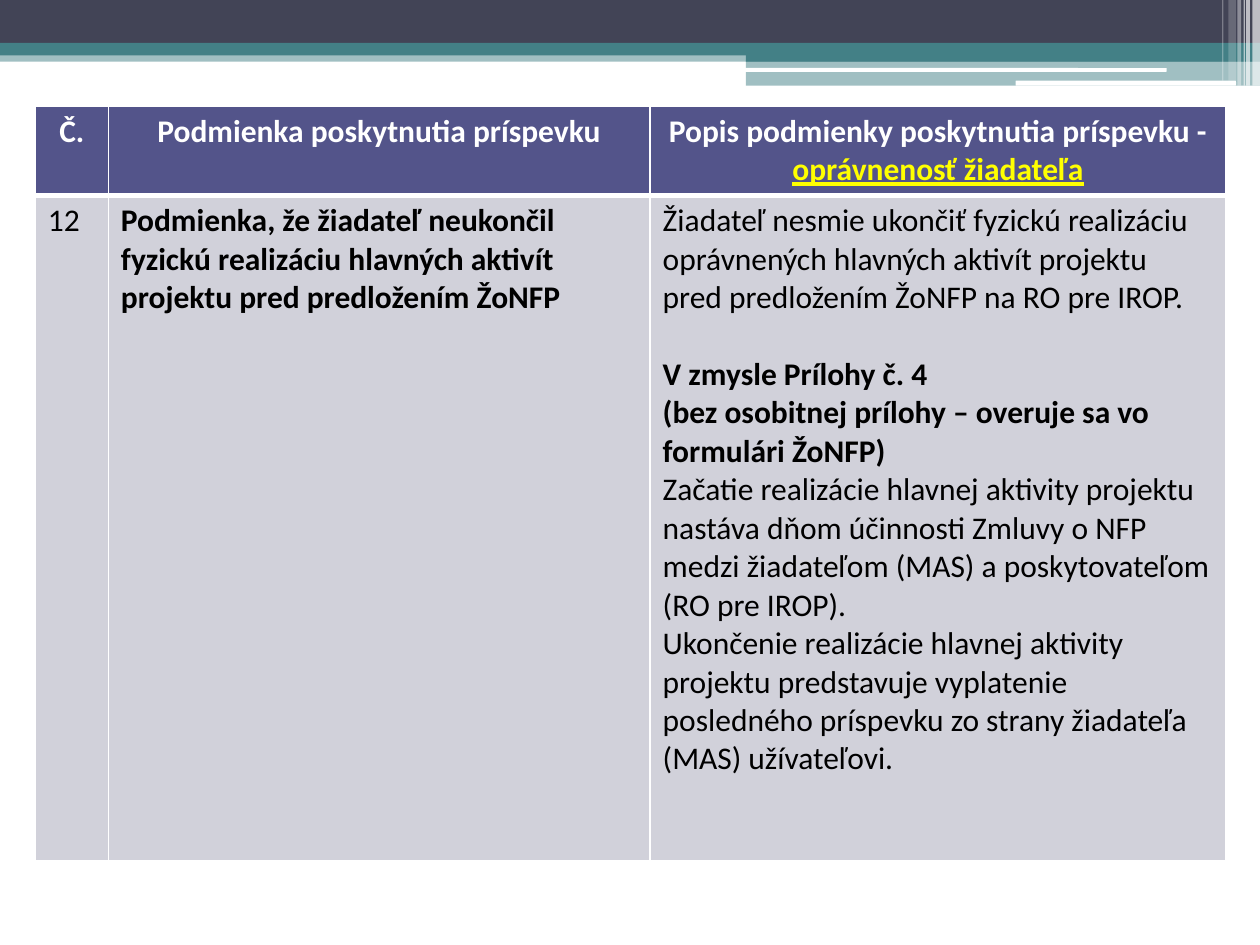
import pptx
import pptx.util
import pptx.dml.color
import pptx.enum.shapes
import pptx.enum.text
import pptx.oxml
import pptx.oxml.ns
from lxml import etree

Inches = pptx.util.Inches
Pt = pptx.util.Pt
RGBColor = pptx.dml.color.RGBColor
Shape = pptx.enum.shapes.MSO_SHAPE
qn = pptx.oxml.ns.qn

WHITE = RGBColor(0xFF, 0xFF, 0xFF)
BLACK = RGBColor(0, 0, 0)
YELLOW = RGBColor(0xFF, 0xFF, 0)
SLATE = RGBColor(0x42, 0x44, 0x56)
TEAL = RGBColor(0x43, 0x80, 0x86)
VIOLET = RGBColor(0x53, 0x54, 0x8A)
PALE = RGBColor(0xD1, 0xD1, 0xDA)

BANDS = [
    (0, 0.4, 10, 0.09, TEAL, 50),
    (0, 0, 10, 0.34, SLATE, 100),
    (0, 0.34, 10, 0.1, TEAL, 100),
    (5.92, 0.39, 4.08, 0.1, TEAL, 100),
    (5.92, 0.48, 4.08, 0.2, TEAL, 50),
]
PILLS = [(5.91, 0.54, 3.35, 0.03), (8.06, 0.64, 1.75, 0.04)]
STRIPES = [
    (9.94, 0.06, 0.68, 65),
    (9.89, 0.03, 0.68, 65),
    (9.87, 0.01, 0.68, 60),
    (9.82, 0.03, 0.68, 40),
    (9.75, 0.06, 0.64, 20),
    (9.7, 0.01, 0.64, 30),
]
COLUMNS = [0.58, 4.3, 4.57]
ROWS = [0.71, 5.28]
HEADINGS = ["Č.", "Podmienka poskytnutia príspevku", "Popis podmienky poskytnutia príspevku - "]
HIGHLIGHT = "oprávnenosť žiadateľa"
CONDITION = [
    [("12", False)],
    [("Podmienka, že žiadateľ neukončil fyzickú realizáciu hlavných aktivít "
      "projektu pred predložením ŽoNFP", True)],
    [("Žiadateľ nesmie ukončiť fyzickú realizáciu oprávnených hlavných aktivít "
      "projektu pred predložením ŽoNFP na RO pre IROP.", False),
     ("V zmysle Prílohy č. 4", True),
     ("(bez osobitnej prílohy – overuje sa vo formulári ŽoNFP)", True),
     ("Začatie realizácie hlavnej aktivity projektu nastáva dňom účinnosti Zmluvy o NFP "
      "medzi žiadateľom (MAS) a poskytovateľom (RO pre IROP).", False),
     ("Ukončenie realizácie hlavnej aktivity projektu predstavuje vyplatenie "
      "posledného príspevku zo strany žiadateľa (MAS) užívateľovi.", False)],
]


def add_block(page, box, color, opacity=100, kind=Shape.RECTANGLE):
    """Add a borderless filled shape with the given opacity in percent."""
    block = page.shapes.add_shape(kind, *(Inches(length) for length in box))
    block.shadow.inherit = False
    block.fill.solid()
    block.fill.fore_color.rgb = color
    block.line.fill.background()
    if opacity < 100:
        tint = block.fill._xPr.find(qn("a:solidFill"))[0]
        etree.SubElement(tint, qn("a:alpha")).set("val", str(opacity * 1000))


def add_banner(page, left, top):
    """Draw the layered bands, pills and stripes along the top edge."""
    for x, y, width, height, color, opacity in BANDS:
        add_block(page, (left + x, top + y, width, height), color, opacity)
    for x, y, width, height in PILLS:
        add_block(page, (left + x, top + y, width, height), WHITE, kind=Shape.ROUNDED_RECTANGLE)
    for x, width, height, opacity in STRIPES:
        add_block(page, (left + x, top, width, height), WHITE, opacity)


def style_span(span, color, bold):
    """Set the table font on a run."""
    span.font.name = "Calibri"
    span.font.size = Pt(18)
    span.font.bold = bold
    span.font.color.rgb = color


def style_cell(cell, fill, bottom):
    """Fill a cell and give it white borders."""
    cell.fill.solid()
    cell.fill.fore_color.rgb = fill
    properties = cell._tc.get_or_add_tcPr()
    widths = {"lnL": 1, "lnR": 1, "lnT": 1, "lnB": bottom}
    for position, (side, width) in enumerate(widths.items()):
        border = etree.Element(qn("a:" + side), w=str(Pt(width)))
        paint = etree.SubElement(border, qn("a:solidFill"))
        etree.SubElement(paint, qn("a:srgbClr")).set("val", str(WHITE))
        properties.insert(position, border)


def fill_heading(cell, heading):
    """Write one centred heading cell."""
    style_cell(cell, VIOLET, 3)
    cell.text_frame.text = heading
    para = cell.text_frame.paragraphs[0]
    para.alignment = pptx.enum.text.PP_ALIGN.CENTER
    style_span(para.runs[0], WHITE, True)


def fill_condition(cell, entries):
    """Write the paragraphs of one body cell."""
    style_cell(cell, PALE, 1)
    frame = cell.text_frame
    frame.text = "\n".join(text for text, bold in entries)
    for para, (text, bold) in zip(frame.paragraphs, entries):
        style_span(para.runs[0], BLACK, bold)


def add_conditions(page, left, top):
    """Build the table of grant conditions."""
    box = (left, top, sum(COLUMNS), sum(ROWS))
    table = page.shapes.add_table(
        len(ROWS), len(COLUMNS), *(Inches(length) for length in box)).table
    for column, width in zip(table.columns, COLUMNS):
        column.width = Inches(width)
    for row, height in zip(table.rows, ROWS):
        row.height = Inches(height)
    for index, (heading, entries) in enumerate(zip(HEADINGS, CONDITION)):
        fill_heading(table.cell(0, index), heading)
        fill_condition(table.cell(1, index), entries)
    span = table.cell(0, 2).text_frame.paragraphs[0].add_run()
    span.text = HIGHLIGHT
    style_span(span, YELLOW, True)
    span.font.underline = True
    table.cell(1, 2).text_frame.paragraphs[1].space_before = Pt(22)


def main():
    """Build and save the slide."""
    deck = pptx.Presentation()
    deck.slide_width = Inches(10)
    deck.slide_height = Inches(7.5)
    page = deck.slides.add_slide(deck.slide_layouts[6])
    add_banner(page, 0, 0)
    add_conditions(page, 0.28, 0.84)
    deck.save("out.pptx")


if __name__ == "__main__":
    main()
